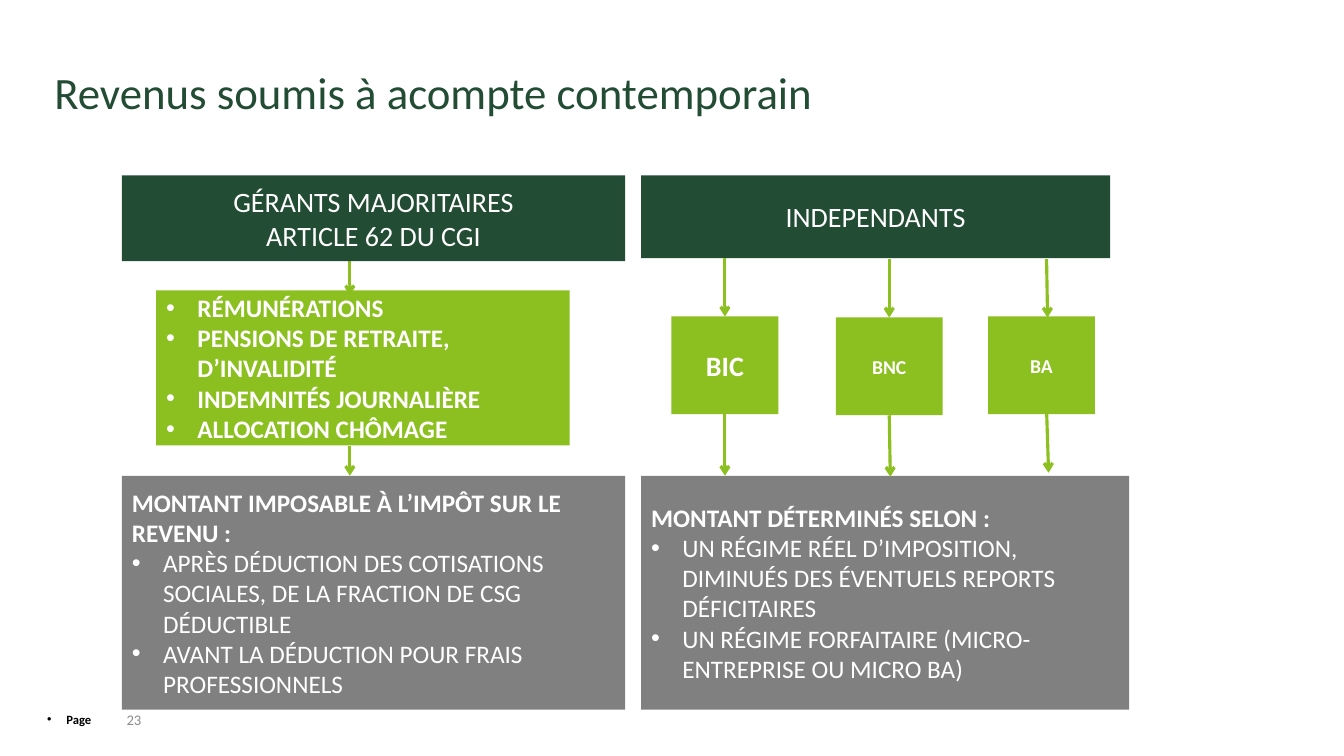
from dataclasses import dataclass

from lxml.etree import SubElement
from pptx import Presentation
from pptx.dml.color import RGBColor
from pptx.enum.shapes import MSO_CONNECTOR, MSO_SHAPE
from pptx.enum.text import MSO_ANCHOR, PP_ALIGN
from pptx.oxml.ns import qn
from pptx.util import Pt

PX = 9144


@dataclass(frozen=True)
class Theme:
    font: str = "Calibri"
    dark: str = "224C33"
    lime: str = "8CBF20"
    grey: str = "808080"
    white: str = "FFFFFF"
    black: str = "000000"
    muted: str = "8C8C8C"
    title: float = 32
    heading: float = 20
    body: float = 18
    label: float = 14
    number: float = 10.5
    footer: float = 9
    line: float = 2.25


@dataclass(frozen=True)
class Line:
    text: str
    bold: bool = False
    indent: int = 0


class SlideBuilder:
    """Draws styled boxes, text and arrows on one page, in px of 1/100 inch."""

    def __init__(self, page, theme):
        self.page = page
        self.theme = theme

    def add_lines(self, shape, lines, size, color, align=PP_ALIGN.LEFT,
                  anchor=MSO_ANCHOR.MIDDLE, spacing=None):
        frame = shape.text_frame
        frame.word_wrap = True
        frame.vertical_anchor = anchor
        for index, line in enumerate(lines):
            para = frame.add_paragraph() if index else frame.paragraphs[0]
            para.alignment = align
            if spacing:
                para.line_spacing = spacing
            if line.indent:
                self.bullet(para, line.indent)
            span = para.add_run()
            span.text = line.text
            span.font.name = self.theme.font
            span.font.size = Pt(size)
            span.font.bold = line.bold
            span.font.color.rgb = RGBColor.from_string(color)

    def bullet(self, para, indent):
        properties = para._p.get_or_add_pPr()
        properties.set("marL", str(indent * PX))
        properties.set("indent", str(-indent * PX))
        SubElement(properties, qn("a:buFont")).set("typeface", "Arial")
        SubElement(properties, qn("a:buChar")).set("char", "•")

    def text(self, place, lines, size, color, **style):
        box = self.page.shapes.add_textbox(*(value * PX for value in place))
        self.add_lines(box, lines, size, color, **style)
        return box

    def box(self, place, fill, lines, size, align=PP_ALIGN.LEFT):
        box = self.page.shapes.add_shape(
            MSO_SHAPE.RECTANGLE, *(value * PX for value in place))
        box.shadow.inherit = False
        box.fill.solid()
        box.fill.fore_color.rgb = RGBColor.from_string(fill)
        box.line.fill.background()
        self.add_lines(box, lines, size, self.theme.white, align)
        return box

    def arrow(self, start, end, source=None, target=None):
        arrow = self.page.shapes.add_connector(
            MSO_CONNECTOR.STRAIGHT, *(value * PX for value in start + end))
        if source:
            arrow.begin_connect(source, 2)
        if target:
            arrow.end_connect(target, 0)
        arrow.line.color.rgb = RGBColor.from_string(self.theme.lime)
        arrow.line.width = Pt(self.theme.line)
        properties = arrow._element.spPr
        SubElement(properties.find(qn("a:ln")), qn("a:tailEnd")).set("type", "arrow")
        SubElement(properties, qn("a:effectLst"))


def main():
    theme = Theme()
    deck = Presentation()
    deck.slide_width, deck.slide_height = 1333 * PX, 750 * PX
    slide = SlideBuilder(deck.slides.add_slide(deck.slide_layouts[6]), theme)

    footer = slide.text((37, 701, 63, 25), [Line("Page", True, 19)],
                        theme.footer, theme.black, anchor=MSO_ANCHOR.TOP)
    footer.text_frame.margin_right = 0
    slide.text((44, 22, 845, 145), [Line("Revenus soumis à acompte contemporain")],
               theme.title, theme.dark, spacing=0.9)

    slide.arrow((347, 257), (347, 293))
    slide.box((121, 174, 499, 85), theme.dark,
              [Line("GÉRANTS MAJORITAIRES"), Line("ARTICLE 62 DU CGI")],
              theme.heading, PP_ALIGN.CENTER)
    slide.box((636, 174, 465, 82), theme.dark, [Line("INDEPENDANTS")],
              theme.heading, PP_ALIGN.CENTER)
    incomes = ("RÉMUNÉRATIONS", "PENSIONS DE RETRAITE, D’INVALIDITÉ",
               "INDEMNITÉS JOURNALIÈRE", "ALLOCATION CHÔMAGE")
    slide.box((155, 288, 410, 154), theme.lime,
              [Line(income, True, 31) for income in incomes], theme.body)

    amounts = (
        (121, 499, "MONTANT IMPOSABLE À L’IMPÔT SUR LE REVENU :",
         ("APRÈS DÉDUCTION DES COTISATIONS SOCIALES, DE LA FRACTION DE CSG DÉDUCTIBLE",
          "AVANT LA DÉDUCTION POUR FRAIS PROFESSIONNELS")),
        (636, 484, "MONTANT DÉTERMINÉS SELON :",
         ("UN RÉGIME RÉEL D’IMPOSITION, DIMINUÉS DES ÉVENTUELS REPORTS DÉFICITAIRES",
          "UN RÉGIME FORFAITAIRE (MICRO-ENTREPRISE OU MICRO BA)")),
    )
    for left, width, heading, rules in amounts:
        slide.box((left, 472, width, 232), theme.grey,
                  [Line(heading, True)] + [Line(rule, indent=31) for rule in rules],
                  theme.body)

    slide.arrow((347, 442), (347, 472))
    joined_regimes = (
        ("BIC", 666, 314, theme.heading, (719, 256), (719, 472)),
        ("BNC", 829, 315, theme.label, (882, 257), (883, 473)),
    )
    for name, left, top, size, start, end in joined_regimes:
        regime = slide.box((left, top, 106, 97), theme.lime, [Line(name, True)],
                           size, PP_ALIGN.CENTER)
        slide.arrow(start, (left + 53, top), target=regime)
        slide.arrow((left + 53, top + 97), end, source=regime)
    slide.box((980, 314, 106, 97), theme.lime, [Line("BA", True)],
              theme.label, PP_ALIGN.CENTER)
    slide.arrow((1038, 257), (1039, 315))
    slide.arrow((1038, 406), (1040, 469))

    slide.text((91, 701, 59, 25), [Line("23")], theme.number, theme.muted,
               align=PP_ALIGN.RIGHT)
    deck.save("out.pptx")


if __name__ == "__main__":
    main()
